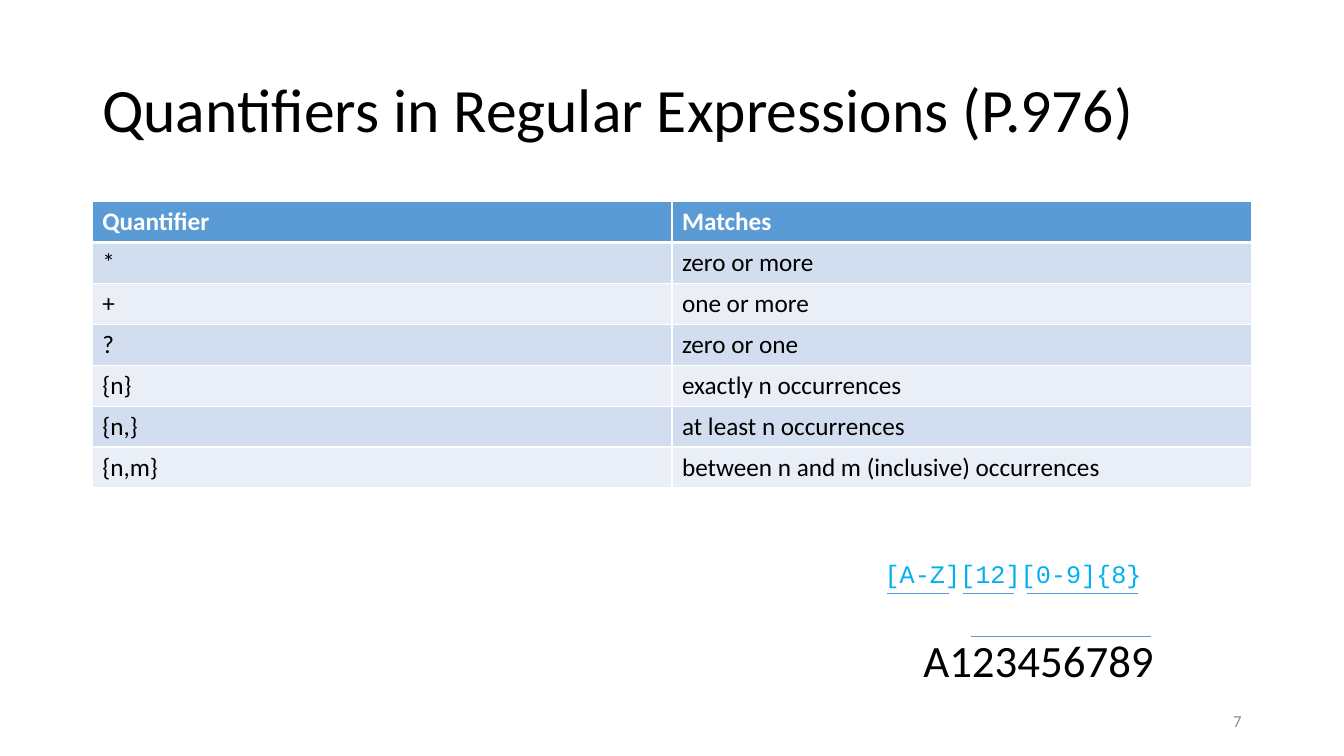
from lxml.etree import SubElement
from pptx import Presentation
from pptx.dml.color import RGBColor
from pptx.enum.shapes import MSO_CONNECTOR as CONN
from pptx.enum.text import MSO_ANCHOR as ANCHOR, MSO_AUTO_SIZE as AUTO, PP_ALIGN as ALIGN
from pptx.oxml.ns import qn
from pptx.util import Pt

PX = 9525
BLACK = RGBColor(0x00, 0x00, 0x00)
WHITE = RGBColor(0xFF, 0xFF, 0xFF)
BLUE = RGBColor(0x5B, 0x9B, 0xD5)
BAND_DARK = RGBColor(0xD2, 0xDE, 0xEF)
BAND_LIGHT = RGBColor(0xEA, 0xEF, 0xF7)
CYAN = RGBColor(0x00, 0xB0, 0xF0)
GREY = RGBColor(0x8C, 0x8C, 0x8C)

QUANTIFIERS = [
    ("Quantifier", "Matches"),
    ("*", "zero or more"),
    ("+", "one or more"),
    ("?", "zero or one"),
    ("{n}", "exactly n occurrences"),
    ("{n,}", "at least n occurrences"),
    ("{n,m}", "between n and m (inclusive) occurrences"),
]


def px(*lengths):
    """Turn pixel lengths into EMU."""
    return [n * PX for n in lengths]


def add_run(p, text, size, color, font="Calibri", bold=False):
    """Add one formatted run to a paragraph."""
    r = p.add_run()
    r.text = text
    r.font.size = Pt(size)
    r.font.name = font
    r.font.bold = bold
    r.font.color.rgb = color


def add_text(s, box, text, size, color, font="Calibri", anchor=ANCHOR.TOP,
             wrap=True, auto=AUTO.NONE):
    """Add a one-line text box and return its paragraph."""
    tf = s.shapes.add_textbox(*px(*box)).text_frame
    tf.word_wrap = wrap
    tf.auto_size = auto
    tf.vertical_anchor = anchor
    p = tf.paragraphs[0]
    add_run(p, text, size, color, font)
    return p


def add_rule(s, x1, x2, y):
    """Draw a thin horizontal rule."""
    line = s.shapes.add_connector(CONN.STRAIGHT, *px(x1, y, x2, y))
    line.line.color.rgb = BLUE
    line.line.width = Pt(0.5)
    SubElement(line._element.spPr, qn("a:effectLst"))


def set_borders(cell, top, bottom):
    """Give a cell white borders, with top and bottom widths in points."""
    tc_pr = cell._tc.get_or_add_tcPr()
    for side, width in zip("LRTB", (1, 1, top, bottom)):
        ln = SubElement(tc_pr, qn(f"a:ln{side}"), w=str(Pt(width)))
        fill = SubElement(ln, qn("a:solidFill"))
        SubElement(fill, qn("a:srgbClr"), val=str(WHITE))


def add_title(s, box):
    """Place the slide title."""
    p = add_text(s, box, "Quantifiers in Regular Expressions (P.976)", 44, BLACK,
                 anchor=ANCHOR.MIDDLE)
    p.line_spacing = 0.9


def add_quantifier_table(s, box):
    """Place the banded table of quantifiers."""
    table = s.shapes.add_table(len(QUANTIFIERS), 2, *px(*box)).table
    for i, texts in enumerate(QUANTIFIERS):
        header = i == 0
        band = BLUE if header else BAND_DARK if i % 2 else BAND_LIGHT
        for j, text in enumerate(texts):
            cell = table.cell(i, j)
            set_borders(cell, 3 if i == 1 else 1, 3 if header else 1)
            cell.fill.solid()
            cell.fill.fore_color.rgb = band
            add_run(cell.text_frame.paragraphs[0], text, 18,
                    WHITE if header else BLACK, bold=header)


def add_example(s, box):
    """Place the pattern, its underlined parts and a matching string."""
    x, y, w, h = box
    add_text(s, (x, y, 265, 38), "[A-Z][12][0-9]{8}", 18, CYAN, "Courier New",
             wrap=False, auto=AUTO.SHAPE_TO_FIT_TEXT)
    add_text(s, (x + 37, y + h - 61, w - 37, 61), "A123456789", 32, BLACK,
             auto=AUTO.SHAPE_TO_FIT_TEXT)
    for start, end, drop in ((12, 71, 38), (84, 133, 38), (145, 251, 38), (92, 263, 79)):
        add_rule(s, x + start, x + end, y + drop)


def add_page_number(s, box):
    """Place the page number at the right."""
    p = add_text(s, box, "7", 12, GREY, anchor=ANCHOR.MIDDLE)
    p.alignment = ALIGN.RIGHT


def main():
    """Build and save the slide."""
    prs = Presentation()
    prs.slide_width, prs.slide_height = px(1280, 720)
    s = prs.slides.add_slide(prs.slide_layouts[6])
    add_title(s, (88, 38, 1104, 139))
    add_quantifier_table(s, (88, 192, 1104, 39 * len(QUANTIFIERS)))
    add_page_number(s, (904, 667, 288, 38))
    add_example(s, (833, 527, 279, 132))
    prs.save("out.pptx")


if __name__ == "__main__":
    main()
